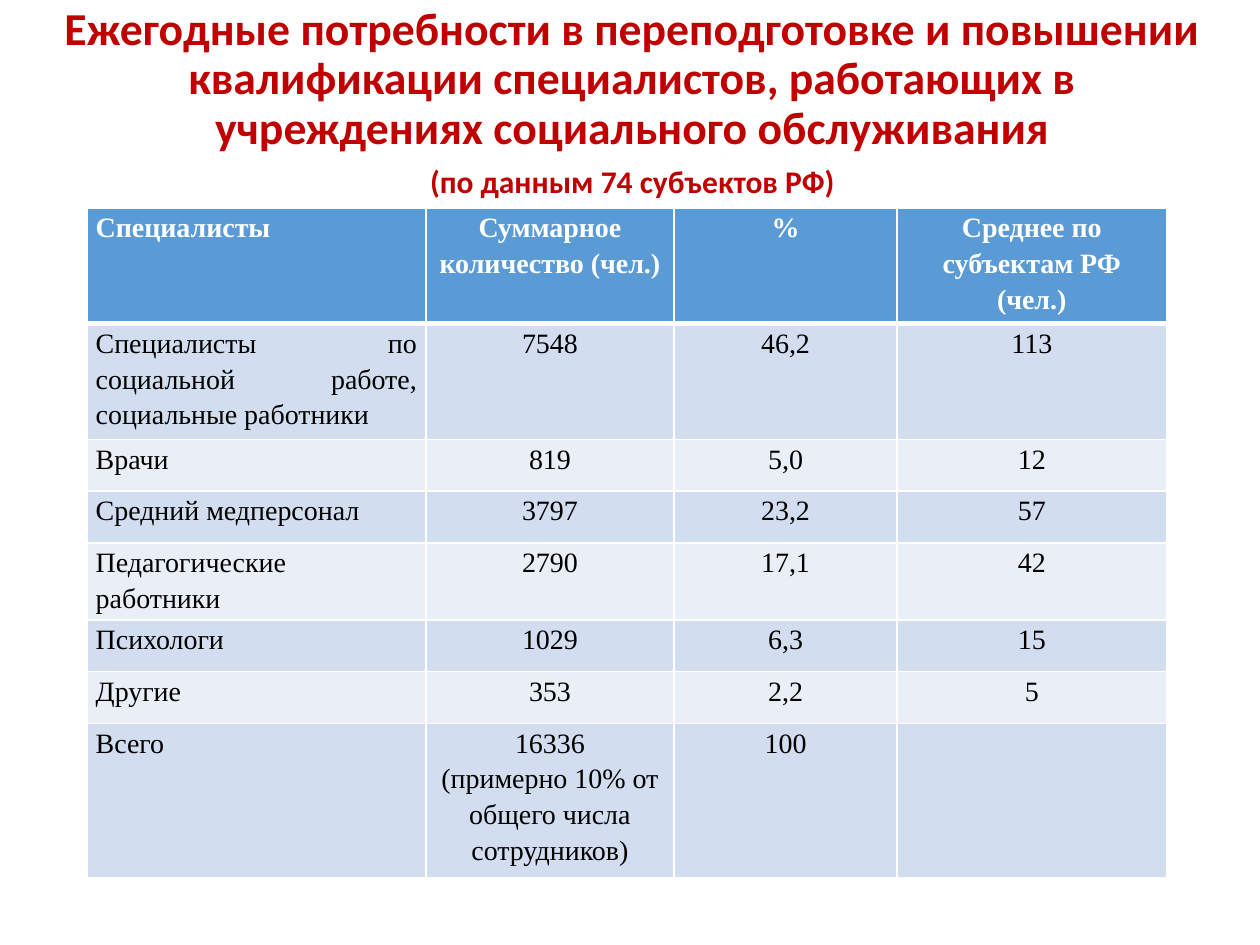
from lxml.etree import SubElement
from pptx import Presentation
from pptx.dml.color import RGBColor
from pptx.enum.text import MSO_ANCHOR, PP_ALIGN
from pptx.oxml.ns import qn
from pptx.util import Inches, Pt

RED = RGBColor(0xC0, 0x00, 0x00)
BLUE = RGBColor(0x5B, 0x9B, 0xD5)
BAND_DARK = RGBColor(0xD2, 0xDE, 0xEF)
BAND_LIGHT = RGBColor(0xEA, 0xEF, 0xF7)
WHITE = RGBColor(0xFF, 0xFF, 0xFF)
BLACK = RGBColor(0x00, 0x00, 0x00)

# Content: heading lines as text, size, space before
HEADING = [
    ("Ежегодные потребности в переподготовке и повышении квалификации "
     "специалистов, работающих в учреждениях социального обслуживания", 26.1, 0),
    ("(по данным 74 субъектов РФ)", 18, 7),
]
# Content: table rows with their heights; a line break starts a new paragraph
STAFF = [
    (0.85, ["Специалисты", "Суммарное количество (чел.)", "%",
            "Среднее по субъектам РФ (чел.)"]),
    (0.85, ["Специалисты по социальной работе, социальные работники",
            "7548", "46,2", "113"]),
    (0.41, ["Врачи", "819", "5,0", "12"]),
    (0.41, ["Средний медперсонал", "3797", "23,2", "57"]),
    (0.57, ["Педагогические работники", "2790", "17,1", "42"]),
    (0.41, ["Психологи", "1029", "6,3", "15"]),
    (0.41, ["Другие", "353", "2,2", "5"]),
    (1.13, ["Всего", "16336\n(примерно 10% от общего числа сотрудников)",
            "100", ""]),
]
COLUMN_WIDTHS = [2.69, 1.97, 1.77, 2.14]


def add_text(paragraph, text, font_name, size, color, bold):
    run = paragraph.add_run()
    run.text = text
    run.font.name = font_name
    run.font.size = Pt(size)
    run.font.color.rgb = color
    run.font.bold = bold


def add_borders(cell, bottom_width):
    """White rules on all four sides; call before the cell is filled."""
    properties = cell._tc.get_or_add_tcPr()
    for side, width in (("L", 1), ("R", 1), ("T", 1), ("B", bottom_width)):
        line = SubElement(properties, qn(f"a:ln{side}"), w=str(Pt(width)))
        fill = SubElement(line, qn("a:solidFill"))
        SubElement(fill, qn("a:srgbClr"), val=str(WHITE))


def fill_cell(cell, text, row, column):
    is_header = row == 0
    add_borders(cell, 3 if is_header else 1)
    cell.fill.solid()
    cell.fill.fore_color.rgb = (
        BLUE if is_header else BAND_DARK if row % 2 else BAND_LIGHT)
    cell.margin_left = cell.margin_right = Inches(0.07)
    cell.margin_top = cell.margin_bottom = 0
    frame = cell.text_frame
    for index, part in enumerate(text.split("\n") if text else []):
        paragraph = frame.add_paragraph() if index else frame.paragraphs[0]
        paragraph.alignment = PP_ALIGN.CENTER if column else PP_ALIGN.JUSTIFY
        paragraph.line_spacing = 1.15
        add_text(paragraph, part, "Times New Roman", 16,
                 WHITE if is_header else BLACK, is_header)


def main():
    presentation = Presentation()
    presentation.slide_width = Inches(10)
    presentation.slide_height = Inches(7.5)
    slide = presentation.slides.add_slide(presentation.slide_layouts[6])

    # Heading
    heading = slide.shapes.add_textbox(
        Inches(0.37), 0, Inches(9.3), Inches(1.6)).text_frame
    heading.word_wrap = True
    heading.vertical_anchor = MSO_ANCHOR.TOP
    for index, (text, size, space_before) in enumerate(HEADING):
        paragraph = heading.add_paragraph() if index else heading.paragraphs[0]
        paragraph.alignment = PP_ALIGN.CENTER
        paragraph.line_spacing = 0.9
        if space_before:
            paragraph.space_before = Pt(space_before)
        add_text(paragraph, text, "Calibri", size, RED, True)

    # Staff table
    table = slide.shapes.add_table(
        len(STAFF), len(COLUMN_WIDTHS), Inches(0.69), Inches(1.65),
        Inches(sum(COLUMN_WIDTHS)),
        Inches(sum(height for height, _ in STAFF))).table
    for column, width in enumerate(COLUMN_WIDTHS):
        table.columns[column].width = Inches(width)
    for row, (height, texts) in enumerate(STAFF):
        table.rows[row].height = Inches(height)
        for column, text in enumerate(texts):
            fill_cell(table.cell(row, column), text, row, column)

    presentation.save("out.pptx")


if __name__ == "__main__":
    main()
